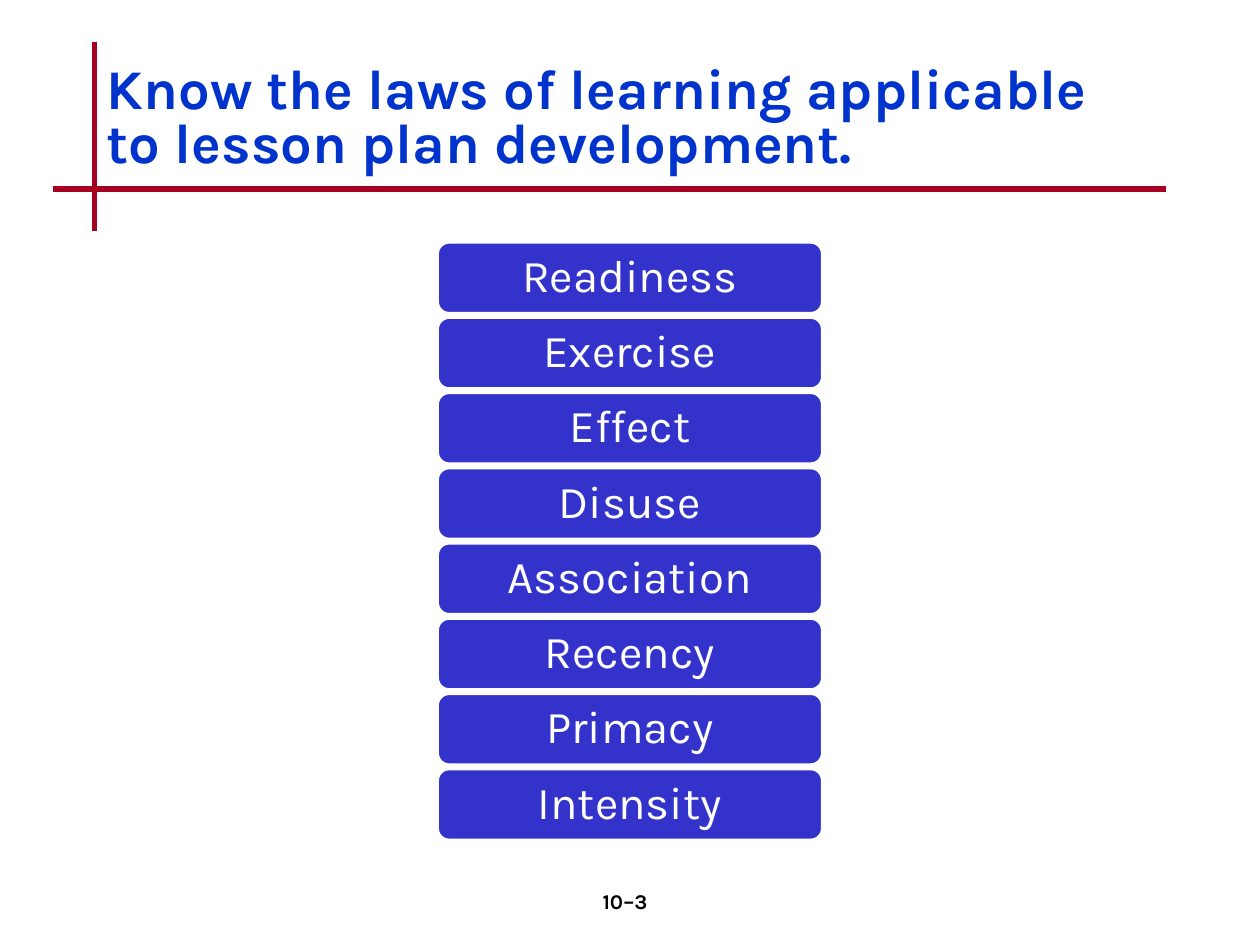
from dataclasses import dataclass

from lxml import etree
from pptx import Presentation
from pptx.dml.color import RGBColor
from pptx.enum.shapes import MSO_CONNECTOR, MSO_SHAPE
from pptx.enum.text import MSO_ANCHOR, PP_ALIGN
from pptx.oxml.ns import qn
from pptx.util import Inches, Pt

STRAIGHT = MSO_CONNECTOR.STRAIGHT
ROUNDED = MSO_SHAPE.ROUNDED_RECTANGLE
MIDDLE, TOP = MSO_ANCHOR.MIDDLE, MSO_ANCHOR.TOP
LEFT, CENTER = PP_ALIGN.LEFT, PP_ALIGN.CENTER


@dataclass(frozen=True)
class Theme:
    font: str = "Karla"
    title_color: RGBColor = RGBColor(0x00, 0x33, 0xCC)
    rule_color: RGBColor = RGBColor(0xA5, 0x00, 0x21)
    bar_color: RGBColor = RGBColor(0x33, 0x33, 0xCC)
    white: RGBColor = RGBColor(0xFF, 0xFF, 0xFF)
    black: RGBColor = RGBColor(0x00, 0x00, 0x00)
    title_size: int = 32
    bar_size: int = 26
    number_size: int = 12


THEME = Theme()
LAWS = ["Readiness", "Exercise", "Effect", "Disuse",
        "Association", "Recency", "Primacy", "Intensity"]


def write_text(shape, text, size, color, bold=False, align=CENTER,
               anchor=MIDDLE, line_spacing=1.0):
    text_frame = shape.text_frame
    text_frame.text = text
    text_frame.word_wrap = True
    text_frame.vertical_anchor = anchor
    paragraph = text_frame.paragraphs[0]
    paragraph.alignment = align
    paragraph.line_spacing = line_spacing
    font = paragraph.runs[0].font
    font.name, font.size, font.bold = THEME.font, Pt(size), bold
    font.color.rgb = color


def add_rule(slide, x1, y1, x2, y2):
    rule = slide.shapes.add_connector(
        STRAIGHT, Inches(x1), Inches(y1), Inches(x2), Inches(y2))
    rule.line.color.rgb = THEME.rule_color
    rule.line.width = Pt(3)
    etree.SubElement(rule._element.spPr, qn("a:effectLst"))


def add_title(slide, left, top, width, height, text):
    # Crossed rules at the lower left of the title
    add_rule(slide, left, top, left, top + 1.5)
    add_rule(slide, left - 0.33, top + 1.17, left + width, top + 1.17)
    box = slide.shapes.add_textbox(
        Inches(left), Inches(top), Inches(width), Inches(height))
    write_text(box, text, THEME.title_size, THEME.title_color, bold=True,
               align=LEFT, line_spacing=0.8)


def add_law_stack(slide, left, top, width, height, laws):
    bar_height = 0.57
    pitch = (height - bar_height) / (len(laws) - 1)
    for index, law in enumerate(laws):
        bar = slide.shapes.add_shape(
            ROUNDED, Inches(left), Inches(top + index * pitch),
            Inches(width), Inches(bar_height))
        bar.shadow.inherit = False
        bar.fill.solid()
        bar.fill.fore_color.rgb = THEME.bar_color
        bar.line.color.rgb = THEME.white
        bar.line.width = Pt(2)
        write_text(bar, law, THEME.bar_size, THEME.white, line_spacing=0.9)


def add_page_number(slide, left, top, width, height, text):
    box = slide.shapes.add_textbox(
        Inches(left), Inches(top), Inches(width), Inches(height))
    write_text(box, text, THEME.number_size, THEME.black, bold=True, anchor=TOP)


def main():
    presentation = Presentation()
    presentation.slide_width = Inches(10)
    presentation.slide_height = Inches(7.5)
    slide = presentation.slides.add_slide(presentation.slide_layouts[6])

    add_title(slide, 0.75, 0.33, 8.5, 1.25,
              "Know the laws of learning applicable to lesson plan development.")
    add_law_stack(slide, 3.47, 1.92, 3.06, 4.75, LAWS)
    add_page_number(slide, 3.92, 7, 2.08, 0.5, "10–3")

    presentation.save("out.pptx")


if __name__ == "__main__":
    main()
